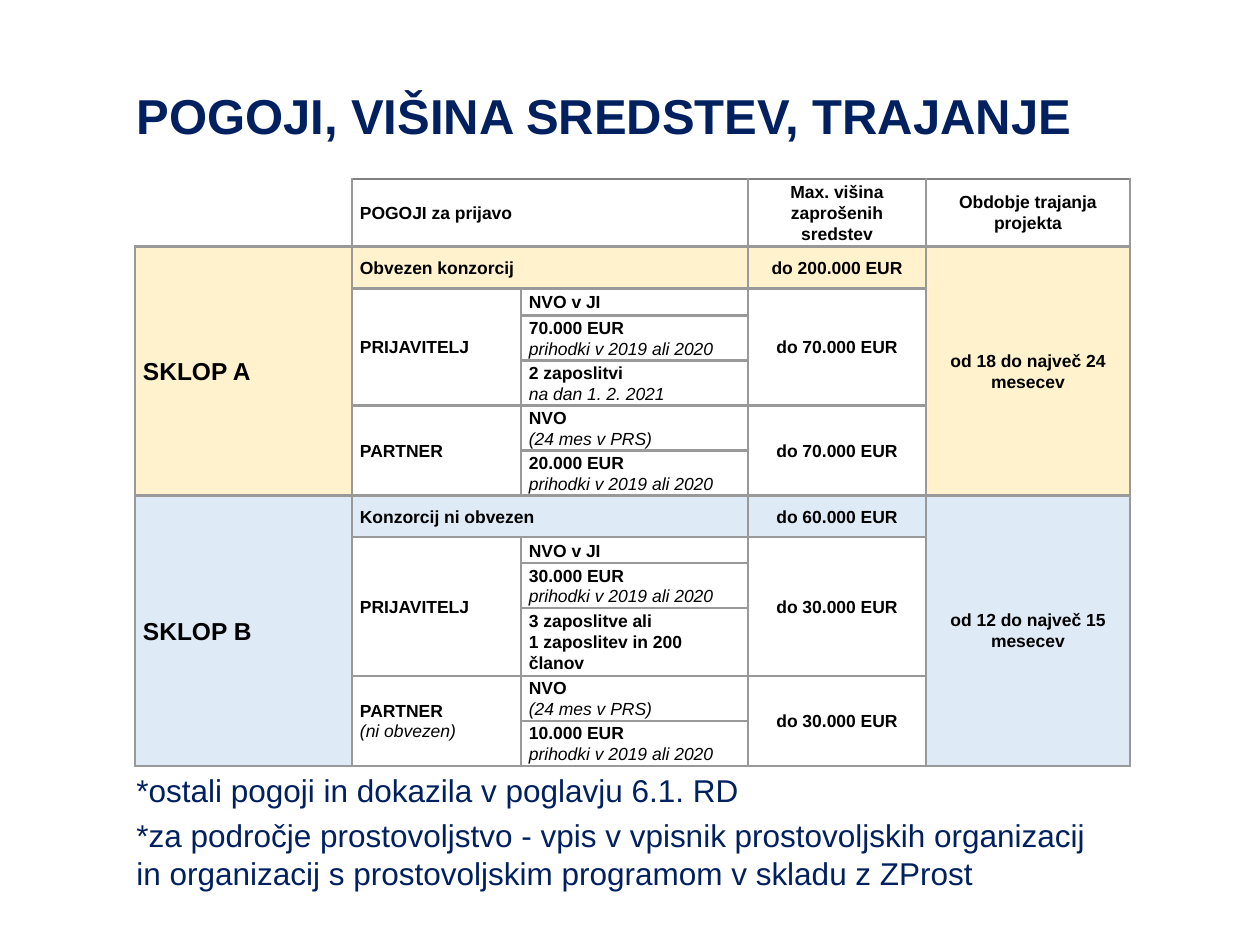
from pptx import Presentation
from pptx.dml.color import RGBColor
from pptx.enum.text import MSO_ANCHOR, PP_ALIGN
from pptx.oxml import parse_xml
from pptx.oxml.ns import nsdecls
from pptx.util import Emu, Pt

COLORS = {"navy": "002060", "black": "000000", "white": "FFFFFF",
          "yellow": "FFF2CC", "blue": "DEEAF6", "grid": "999999", "top": "808080"}
PX = 914400 / 126
ITALIC = "~"  # prefix of a line set in italics instead of bold

COLUMNS = [217, 169, 227, 178, 204]
ROWS = [66, 42, 27, 43, 43, 44, 43, 42, 26, 43, 66, 44, 43]
CENTERED_COLUMNS = (3, 4)

HEADERS = {1: "POGOJI za prijavo", 3: "Max. višina zaprošenih sredstev",
           4: "Obdobje trajanja projekta"}
SECTIONS = [
    dict(name="SKLOP A", fill="yellow", consortium="Obvezen konzorcij",
         total="do 200.000 EUR", share="do 70.000 EUR",
         duration="od 18 do največ 24 mesecev", partner="PARTNER",
         conditions=["NVO v JI",
                     "70.000 EUR\n~prihodki v 2019 ali 2020",
                     "2 zaposlitvi\n~na dan 1. 2. 2021",
                     "NVO\n~(24 mes v PRS)",
                     "20.000 EUR\n~prihodki v 2019 ali 2020"]),
    dict(name="SKLOP B", fill="blue", consortium="Konzorcij ni obvezen",
         total="do 60.000 EUR", share="do 30.000 EUR",
         duration="od 12 do največ 15 mesecev", partner="PARTNER\n~(ni obvezen)",
         conditions=["NVO v JI",
                     "30.000 EUR\n~prihodki v 2019 ali 2020",
                     "3 zaposlitve ali\n1 zaposlitev in 200 članov",
                     "NVO\n~(24 mes v PRS)",
                     "10.000 EUR\n~prihodki v 2019 ali 2020"]),
]
REMARKS = ["*ostali pogoji in dokazila v poglavju 6.1. RD",
           "*za področje prostovoljstvo - vpis v vpisnik prostovoljskih organizacij "
           "in organizacij s prostovoljskim programom v skladu z ZProst"]


def px(length):
    return Emu(round(length * PX))


def rgb(name):
    return RGBColor.from_string(COLORS[name])


class SlideBuilder:
    def __init__(self, page, font="Arial"):
        self.page = page
        self.font = font

    def format_para(self, para, size, color, bold=False, italic=False):
        for span in para.runs:
            span.font.name = self.font
            span.font.size = Pt(size)
            span.font.color.rgb = rgb(color)
            span.font.bold = bold
            span.font.italic = italic

    def title(self, left, top, width, height, text):
        box = self.page.shapes.title
        box.left, box.top, box.width, box.height = map(px, (left, top, width, height))
        frame = box.text_frame
        frame.text = text
        frame.vertical_anchor = MSO_ANCHOR.MIDDLE
        frame.paragraphs[0].alignment = PP_ALIGN.LEFT
        self.format_para(frame.paragraphs[0], 28, "navy", bold=True)

    def text(self, left, top, width, height, lines):
        frame = self.page.shapes.add_textbox(*map(px, (left, top, width, height))).text_frame
        frame.word_wrap = True
        frame.text = "\n".join(lines)
        for index, para in enumerate(frame.paragraphs):
            para.space_before = Pt(4 if index else 0)
            self.format_para(para, 18, "navy")

    def table(self, left, top, columns, rows):
        frame = self.page.shapes.add_table(
            len(rows), len(columns), px(left), px(top), px(sum(columns)), px(sum(rows)))
        table = frame.table
        table.first_row = table.horz_banding = False
        for column, width in zip(table.columns, columns):
            column.width = px(width)
        for row, height in zip(table.rows, rows):
            row.height = px(height)
        for row in range(len(rows)):
            for column in range(len(columns)):
                cell = table.cell(row, column)
                cell.margin_left = cell.margin_right = px(8)
                cell.margin_top = cell.margin_bottom = 0
                cell.vertical_anchor = MSO_ANCHOR.MIDDLE
                cell.fill.solid()
                cell.fill.fore_color.rgb = rgb("white")
                self.borders(cell, "RB" if row == column == 0 else "LRTB",
                             "top" if row == 0 else "grid")
                # An empty cell would otherwise force its row to 18 pt text height
                cell.text_frame.paragraphs[0].font.size = Pt(10)
        return table

    def borders(self, cell, sides, top_color):
        properties = cell._tc.get_or_add_tcPr()
        for index, side in enumerate(sides):
            color = COLORS[top_color if side == "T" else "grid"]
            properties.insert(index, parse_xml(
                f'<a:ln{side} {nsdecls("a")} w="{Pt(1.5)}"><a:solidFill>'
                f'<a:srgbClr val="{color}"/></a:solidFill></a:ln{side}>'))

    def cell(self, table, row, column, text, fill="white", size=10, down=1, across=1):
        """Fill a cell that spans the given number of rows down and columns across."""
        cell = table.cell(row, column)
        if down * across > 1:
            cell.merge(table.cell(row + down - 1, column + across - 1))
        cell.fill.fore_color.rgb = rgb(fill)
        lines = text.split("\n")
        cell.text_frame.text = text.replace(ITALIC, "")
        for line, para in zip(lines, cell.text_frame.paragraphs):
            italic = line.startswith(ITALIC)
            para.alignment = PP_ALIGN.CENTER if column in CENTERED_COLUMNS else PP_ALIGN.LEFT
            para.line_spacing = 1.07
            self.format_para(para, size, "black", bold=not italic, italic=italic)

    def section(self, table, row, section):
        fill = section["fill"]
        self.cell(table, row, 0, section["name"], fill, size=14, down=6)
        self.cell(table, row, 1, section["consortium"], fill, across=2)
        self.cell(table, row, 3, section["total"], fill)
        self.cell(table, row, 4, section["duration"], fill, down=6)
        for start, role, down in ((1, "PRIJAVITELJ", 3), (4, section["partner"], 2)):
            self.cell(table, row + start, 1, role, down=down)
            self.cell(table, row + start, 3, section["share"], down=down)
        for offset, condition in enumerate(section["conditions"], start=1):
            self.cell(table, row + offset, 2, condition)


def main():
    deck = Presentation()
    deck.slide_width, deck.slide_height = px(1260), px(945)
    builder = SlideBuilder(deck.slides.add_slide(deck.slide_layouts[5]))
    builder.title(124, 56, 1042, 118, "POGOJI, VIŠINA SREDSTEV, TRAJANJE")
    builder.text(124, 765, 1004, 130, REMARKS)
    table = builder.table(135, 179, COLUMNS, ROWS)
    for column, text in HEADERS.items():
        builder.cell(table, 0, column, text, across=2 if column == 1 else 1)
    for index, section in enumerate(SECTIONS):
        builder.section(table, 1 + 6 * index, section)
    deck.save("out.pptx")


if __name__ == "__main__":
    main()
